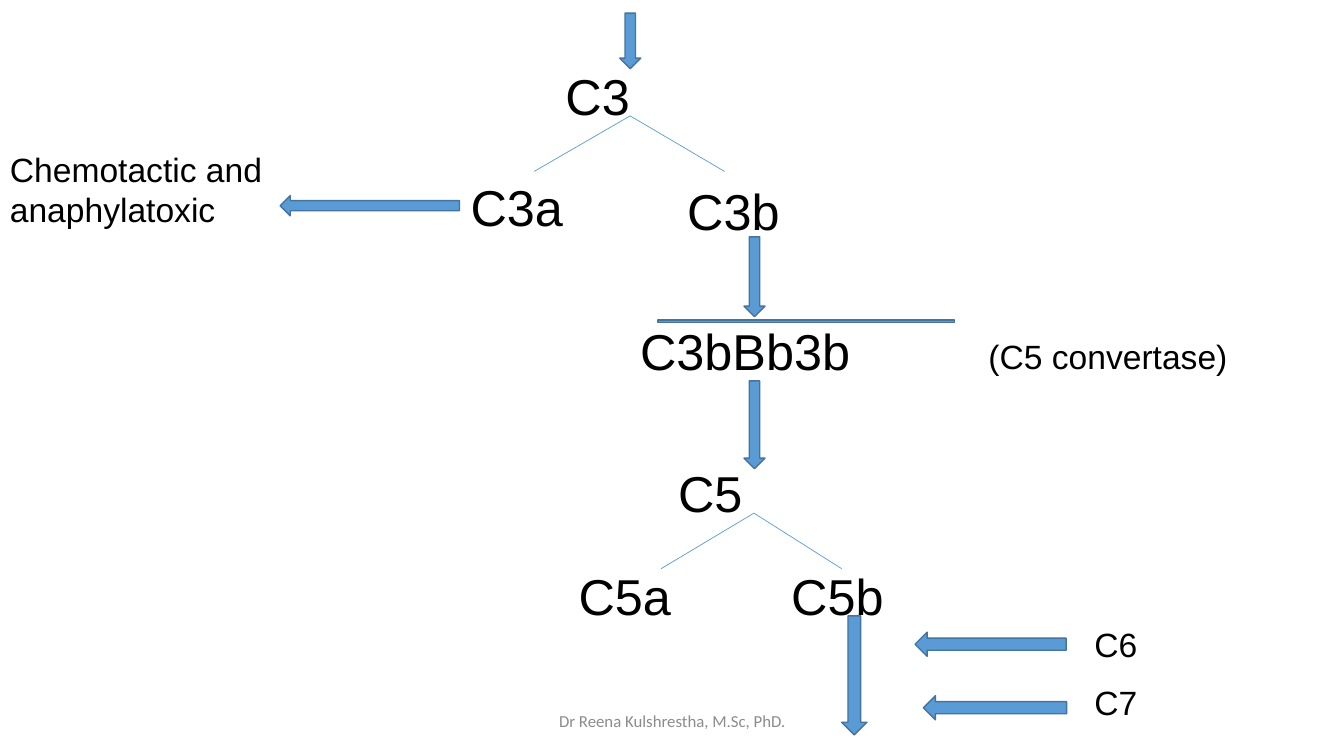
from pptx import Presentation
from pptx import util as u
from pptx.dml.color import RGBColor
from pptx.enum import shapes, text
from pptx.oxml.ns import qn
from lxml import etree

BLUE = RGBColor(0x5B, 0x9B, 0xD5)
DARK_BLUE = RGBColor(0x43, 0x73, 0x9E)
BLACK = RGBColor(0, 0, 0)
GREY = RGBColor(0x8C, 0x8C, 0x8C)

DOWN = shapes.MSO_SHAPE.DOWN_ARROW
LEFT = shapes.MSO_SHAPE.LEFT_ARROW
BAR = shapes.MSO_SHAPE.MATH_MINUS


class PathwaySlide:
    """Current slide with the pathway's style; all lengths are in cm."""

    def __init__(self, slide):
        self.shapes = slide.shapes

    def label(self, wording, left, top, width, height=1.8, size=36,
              font="Arial", color=BLACK):
        box = self.shapes.add_textbox(*map(u.Cm, (left, top, width, height)))
        frame = box.text_frame
        frame.word_wrap = True
        frame.text = wording
        paragraph = frame.paragraphs[0]
        paragraph.font.name = font
        paragraph.font.size = u.Pt(size)
        paragraph.font.color.rgb = color
        return frame

    def block(self, kind, left, top, width, height):
        block = self.shapes.add_shape(
            kind, *map(u.Cm, (left, top, width, height)))
        block.shadow.inherit = False
        block.fill.solid()
        block.fill.fore_color.rgb = BLUE
        block.line.color.rgb = DARK_BLUE
        block.line.width = u.Pt(1)

    def cleavage(self, apex_x, apex_y, *ends_x, drop=1.4):
        """Thin branches from one component to its fragments."""
        for end_x in ends_x:
            branch = self.shapes.add_connector(
                shapes.MSO_CONNECTOR.STRAIGHT,
                *map(u.Cm, (apex_x, apex_y, end_x, apex_y + drop)))
            branch.line.color.rgb = BLUE
            branch.line.width = u.Pt(0.5)
            etree.SubElement(branch._element.spPr, qn("a:effectLst"))


def main():
    deck = Presentation()
    deck.slide_width, deck.slide_height = u.Cm(33.87), u.Cm(19.05)
    pathway = PathwaySlide(deck.slides.add_slide(deck.slide_layouts[6]))

    # Complement components and their fragments
    for component, left, top, width in (
        ("C3", 14, 1.52, 7.2),
        ("C3a", 11.61, 4.32, 5.08),
        ("C3b", 17.07, 4.42, 5.99),
        ("C3bBb3b", 15.88, 7.95, 13.34),
        ("C5", 16.84, 11.53, 11.4),
        ("C5a", 14.33, 14.12, 8.26),
        ("C5b", 19.69, 14.12, 7.21),
    ):
        pathway.label(component, left, top, width)

    # Cleavage of C3 and C5
    pathway.cleavage(15.88, 2.92, 13.46, 18.26)
    pathway.cleavage(19, 12.93, 16.66, 21.21)

    # Block arrows and the bar over the convertase
    for kind, left, top, width, height in (
        (DOWN, 15.62, 0.33, 0.53, 1.4),
        (DOWN, 18.75, 5.97, 0.53, 2.01),
        (DOWN, 18.75, 9.6, 0.53, 2.21),
        (DOWN, 21.21, 15.52, 0.64, 3),
        (LEFT, 7.06, 4.93, 4.52, 0.51),
        (LEFT, 23.06, 15.93, 3.81, 0.61),
        (LEFT, 23.27, 17.53, 3.61, 0.61),
        (BAR, 15.24, 7.95, 10.16, 0.3),
    ):
        pathway.block(kind, left, top, width, height)

    # Side notes
    for note, left, top, width, height in (
        ("Chemotactic and anaphylatoxic", 0, 3.63, 7.72, 2.31),
        ("(C5 convertase)", 24.66, 8.33, 8.81, 1.3),
        ("C6", 27.33, 15.6, 5, 1.3),
        ("C7", 27.33, 17.07, 2.67, 1.3),
    ):
        pathway.label(note, left, top, width, height, size=24)

    # Footer
    footer = pathway.label("Dr Reena Kulshrestha, M.Sc, PhD.", 11.23, 17.65,
                           11.43, 1.02, 12, "Calibri", GREY)
    footer.vertical_anchor = text.MSO_ANCHOR.MIDDLE
    footer.paragraphs[0].alignment = text.PP_ALIGN.CENTER

    deck.save("out.pptx")


if __name__ == "__main__":
    main()
